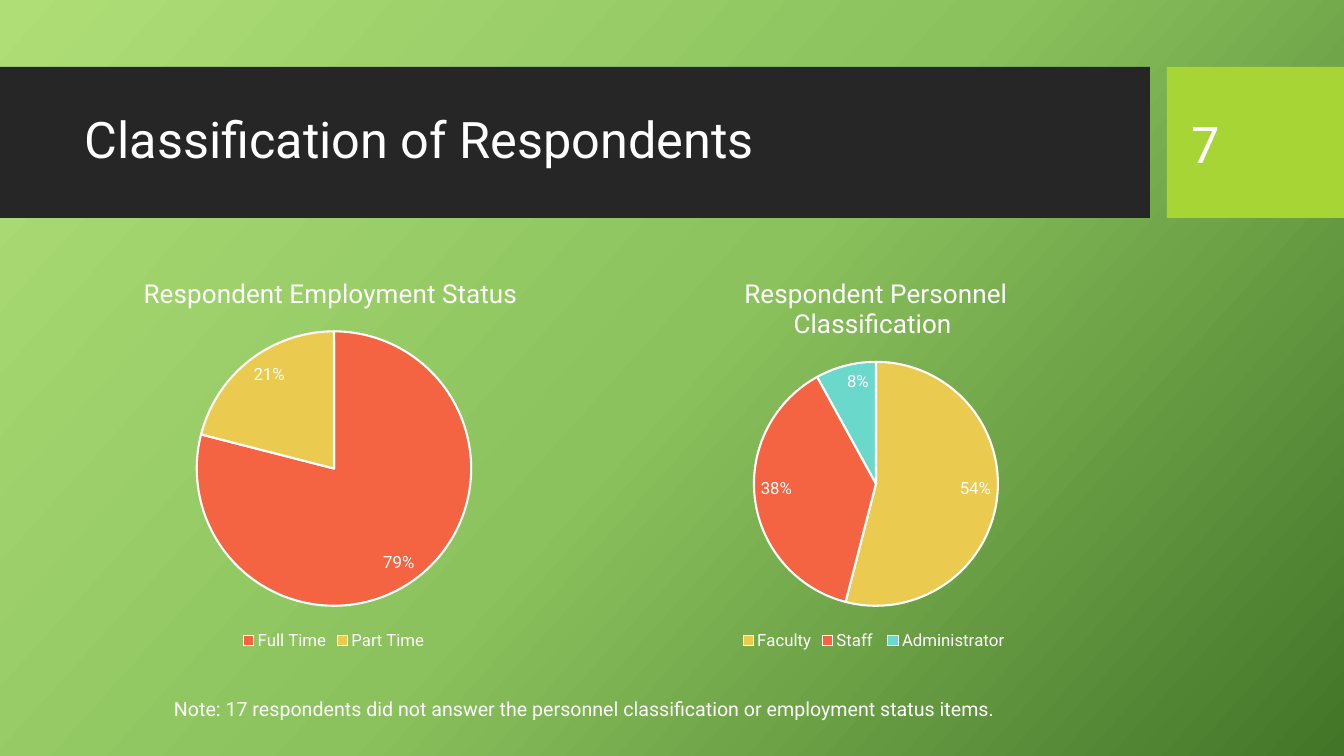
from copy import deepcopy

from pptx import Presentation
from pptx.chart.data import CategoryChartData
from pptx.dml.color import RGBColor
from pptx.enum.chart import XL_CHART_TYPE as ChartType
from pptx.enum.chart import XL_LABEL_POSITION as LabelPosition
from pptx.enum.chart import XL_LEGEND_POSITION as LegendPosition
from pptx.enum.shapes import MSO_SHAPE as Shape
from pptx.enum.text import MSO_ANCHOR as Anchor
from pptx.oxml.ns import qn
from pptx.util import Pt

PX = 914400 / 100.8
FONT = "Roboto"
WHITE, DARK, LIME = "FFFFFF", "262626", "A7D535"
RED, YELLOW, TEAL = "F46442", "EACA4F", "6AD8CB"


def style(font, size):
    font.name = FONT
    font.size = Pt(size)
    font.bold = False
    font.color.rgb = RGBColor.from_string(WHITE)


def add_text(text, box, size=36, anchor=Anchor.MIDDLE, line_spacing=1.0):
    frame = slide.shapes.add_textbox(*[round(v * PX) for v in box]).text_frame
    frame.word_wrap = True
    frame.vertical_anchor = anchor
    paragraph = frame.paragraphs[0]
    paragraph.line_spacing = line_spacing
    run = paragraph.add_run()
    run.text = text
    style(run.font, size)


prs = Presentation()
prs.slide_width, prs.slide_height = round(1344 * PX), round(756 * PX)
slide = prs.slides.add_slide(prs.slide_layouts[6])

# Diagonal green background
background = slide.background.fill
background.gradient()
background.gradient_angle = 360 - 42
stop_list = slide.element.find(".//" + qn("a:gsLst"))
stop_list.append(deepcopy(stop_list[-1]))
green_stops = [(0, "AFDE77"), (0.5, "8BC25D"), (1, "437528")]
for stop, (position, color) in zip(background.gradient_stops, green_stops):
    stop.position = position
    stop.color.rgb = RGBColor.from_string(color)

# Header band and page number block
for left, width, color in [(0, 1150, DARK), (1167, 177, LIME)]:
    band = slide.shapes.add_shape(
        Shape.RECTANGLE, *[round(v * PX) for v in (left, 67, width, 151)])
    band.shadow.inherit = False
    band.fill.solid()
    band.fill.fore_color.rgb = RGBColor.from_string(color)
    band.line.fill.background()

add_text("Classification of Respondents", (75, 83, 1059, 119), line_spacing=0.9)

# Pie charts: left edge, title, then category, share and colour of each slice
pies = [
    (75, "Respondent Employment Status ",
     [("Full Time", 0.79, RED), ("Part Time", 0.21, YELLOW)]),
    (617, "Respondent Personnel Classification ",
     [("Faculty", 0.54, YELLOW), ("Staff ", 0.38, RED),
      ("Administrator ", 0.08, TEAL)]),
]
for left, title, slices in pies:
    categories, shares, colors = zip(*slices)
    data = CategoryChartData(number_format="0%")
    data.categories = categories
    data.add_series(title, shares)
    chart = slide.shapes.add_chart(
        ChartType.PIE, *[round(v * PX) for v in (left, 258, 518, 397)], data).chart
    style(chart.font, 10)

    chart.has_title = True
    chart.chart_title.include_in_layout = False
    title_run = chart.chart_title.text_frame.paragraphs[0].add_run()
    title_run.text = title
    style(title_run.font, 18.6)

    chart.has_legend = True
    chart.legend.position = LegendPosition.BOTTOM
    chart.legend.include_in_layout = False
    style(chart.legend.font, 12)

    plot = chart.plots[0]
    plot.vary_by_categories = True
    plot.has_data_labels = True
    labels = plot.data_labels
    labels.show_value = True
    labels.show_percentage = False
    labels.number_format = "0%"
    labels.number_format_is_linked = False
    labels.position = LabelPosition.INSIDE_END
    style(labels.font, 12)

    for index, color in enumerate(colors):
        wedge = plot.series[0].points[index].format
        wedge.fill.solid()
        wedge.fill.fore_color.rgb = RGBColor.from_string(color)
        wedge.line.color.rgb = RGBColor.from_string(WHITE)
        wedge.line.width = Pt(1.5)

add_text("7", (1182, 83, 127, 120))
add_text("Note: 17 respondents did not answer the personnel classification "
         "or employment status items.",
         (164, 692, 902, 34), size=14, anchor=Anchor.TOP)

prs.save("out.pptx")
